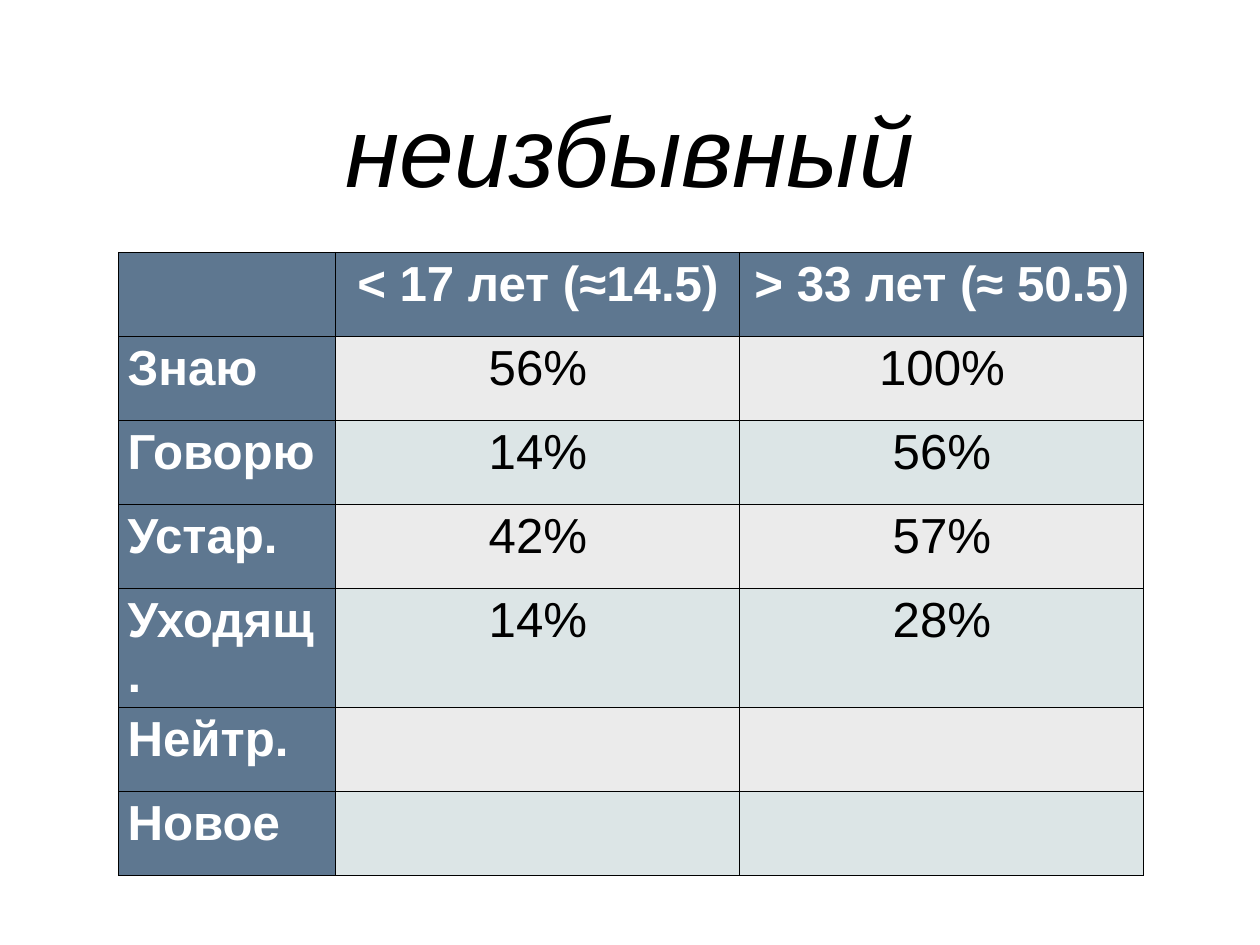
from lxml.etree import SubElement
from pptx import Presentation
from pptx.dml.color import RGBColor
from pptx.enum.text import MSO_ANCHOR, PP_ALIGN
from pptx.oxml.ns import qn
from pptx.util import Inches, Pt

COLORS = {
    "header": "5E7790",
    "odd row": "EBEBEB",
    "even row": "DCE5E6",
    "border": "000000",
    "text": "000000",
    "header text": "FFFFFF",
}
ROWS = [
    ("", "< 17 лет (≈14.5)", "> 33 лет (≈ 50.5)"),
    ("Знаю", "56%", "100%"),
    ("Говорю", "14%", "56%"),
    ("Устар.", "42%", "57%"),
    ("Уходящ.", "14%", "28%"),
    ("Нейтр.", "", ""),
    ("Новое", "", ""),
]
COLUMN_WIDTHS = [2.45, 4.56, 4.56]
ROW_HEIGHT = 0.95


def write(text_frame, text, color, alignment, **font_format):
    paragraph = text_frame.paragraphs[0]
    paragraph.alignment = alignment
    run = paragraph.add_run()
    run.text = text
    run.font.color.rgb = RGBColor.from_string(COLORS[color])
    for name, value in {"name": "Arial", **font_format}.items():
        setattr(run.font, name, value)


def add_borders(cell):
    properties = cell._tc.get_or_add_tcPr()
    for side in ("lnL", "lnR", "lnT", "lnB"):
        line = SubElement(properties, qn(f"a:{side}"), w=str(Pt(1)))
        fill = SubElement(line, qn("a:solidFill"))
        SubElement(fill, qn("a:srgbClr"), val=COLORS["border"])


presentation = Presentation()
presentation.slide_width = Inches(14.22)
presentation.slide_height = Inches(10.67)
slide = presentation.slides.add_slide(presentation.slide_layouts.get_by_name("Title Only"))

title = slide.shapes.title
title.left, title.top = Inches(1.04), Inches(0.49)
title.width, title.height = Inches(12.14), Inches(2.36)
title_format = {
    "margin_left": 0,
    "margin_right": 0,
    "margin_top": 0,
    "margin_bottom": 0,
    "vertical_anchor": MSO_ANCHOR.MIDDLE,
    "word_wrap": True,
}
for name, value in title_format.items():
    setattr(title.text_frame, name, value)
write(title.text_frame, "неизбывный", "text", PP_ALIGN.CENTER, size=Pt(80), italic=True)

table = slide.shapes.add_table(
    len(ROWS), len(COLUMN_WIDTHS), Inches(1.34), Inches(2.85),
    Inches(sum(COLUMN_WIDTHS)), Inches(ROW_HEIGHT * len(ROWS)),
).table
for column, width in zip(table.columns, COLUMN_WIDTHS):
    column.width = Inches(width)

for row_index, texts in enumerate(ROWS):
    table.rows[row_index].height = Inches(ROW_HEIGHT)
    band = "odd row" if row_index % 2 else "even row"
    for column_index, text in enumerate(texts):
        cell = table.cell(row_index, column_index)
        is_header = row_index == 0 or column_index == 0
        add_borders(cell)
        cell.fill.solid()
        cell.fill.fore_color.rgb = RGBColor.from_string(COLORS["header" if is_header else band])
        if text:
            write(
                cell.text_frame, text, "header text" if is_header else "text",
                PP_ALIGN.CENTER if column_index else PP_ALIGN.LEFT,
                size=Pt(40), bold=is_header,
            )

presentation.save("out.pptx")
